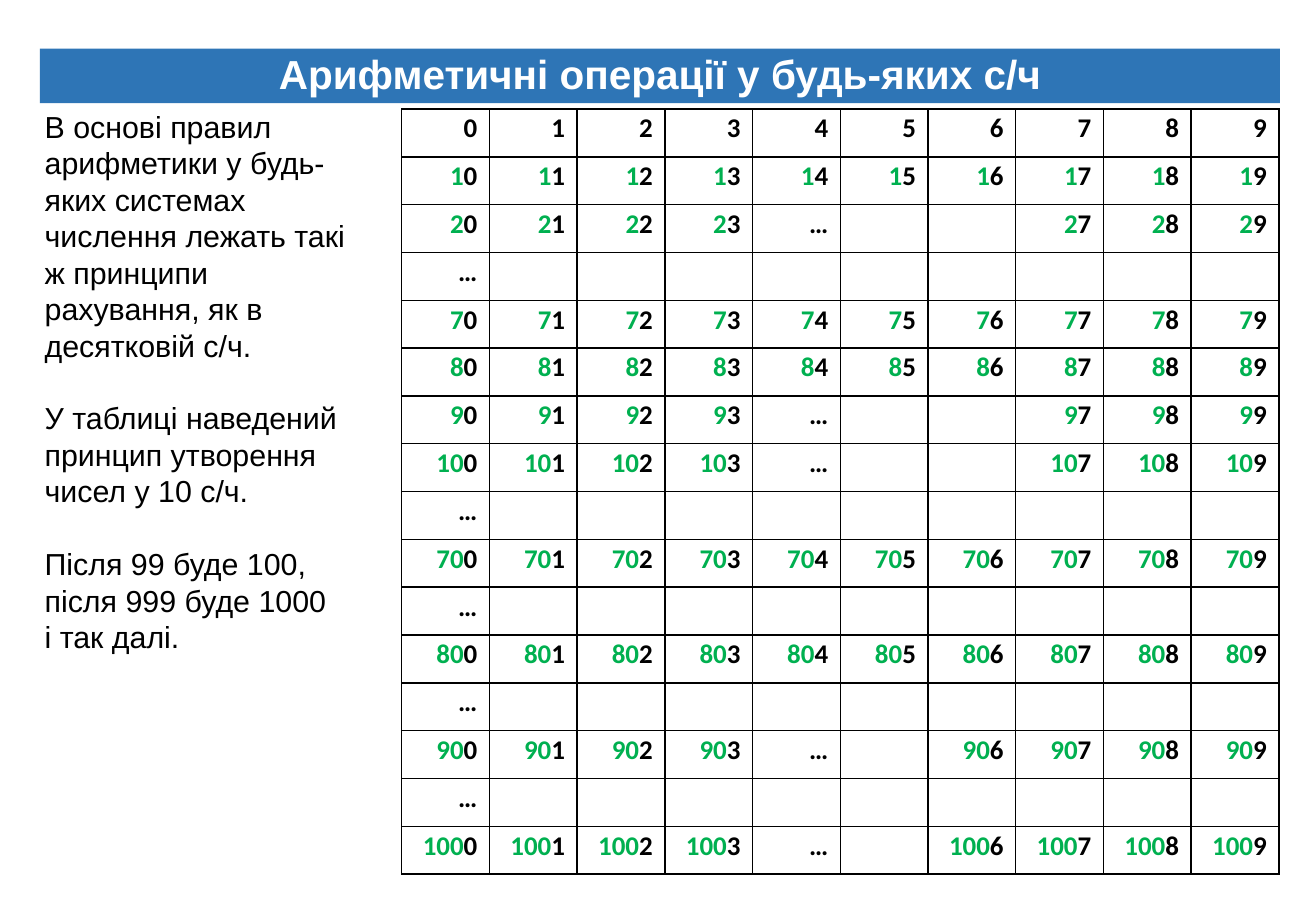
"""Builds the slide on how numbers are formed in the decimal system."""
import pptx
import pptx.dml.color
import pptx.enum.shapes
import pptx.enum.text
import pptx.util
import lxml.etree
from pptx.oxml.ns import qn

Pt = pptx.util.Pt
ALIGN = pptx.enum.text.PP_ALIGN
ANCHOR = pptx.enum.text.MSO_ANCHOR
COLORS = {"banner": "2E75B6", "white": "FFFFFF", "black": "000000", "prefix": "00B050"}


def style_run(run, font, size, color, bold=False):
    run.font.name = font
    run.font.size = Pt(size)
    run.font.bold = bold
    run.font.color.rgb = pptx.dml.color.RGBColor.from_string(COLORS[color])


def add_borders(cell):
    properties = cell._tc.get_or_add_tcPr()
    for position, side in enumerate(("a:lnL", "a:lnR", "a:lnT", "a:lnB")):
        line = lxml.etree.Element(qn(side), w=str(Pt(1)))
        fill = lxml.etree.SubElement(line, qn("a:solidFill"))
        lxml.etree.SubElement(fill, qn("a:srgbClr"), val=COLORS["black"])
        properties.insert(position, line)


presentation = pptx.Presentation()
presentation.slide_width = Pt(780)
presentation.slide_height = Pt(540)
slide = presentation.slides.add_slide(presentation.slide_layouts[6])

banner = slide.shapes.add_shape(
    pptx.enum.shapes.MSO_SHAPE.RECTANGLE, Pt(23.7), Pt(28.8), Pt(735), Pt(32.4))
banner.shadow.inherit = False
banner.fill.solid()
banner.fill.fore_color.rgb = pptx.dml.color.RGBColor.from_string(COLORS["banner"])
banner.line.fill.background()
heading = banner.text_frame
heading.margin_left = heading.margin_right = Pt(5.8)
heading.margin_top = heading.margin_bottom = Pt(2.9)
heading.vertical_anchor = ANCHOR.BOTTOM
heading.text = "Арифметичні операції у будь-яких с/ч"
heading.paragraphs[0].alignment = ALIGN.CENTER
heading.paragraphs[0].line_spacing = 0.9
style_run(heading.paragraphs[0].runs[0], "Arial", 24, "white", True)

explanation_lines = [
    ("В основі правил арифметики у будь-яких системах числення лежать такі ж "
     "принципи рахування, як в десятковій с/ч.", 0),
    ("У таблиці наведений принцип утворення чисел у 10 с/ч.", 21.6),
    ("Після 99 буде 100,", 21.6),
    ("після 999 буде 1000", 0),
    ("і так далі.", 0),
]
explanation = slide.shapes.add_textbox(Pt(19.4), Pt(60.5), Pt(208), Pt(356.4)).text_frame
explanation.word_wrap = True
explanation.text = "\n".join(text for text, gap in explanation_lines)
for paragraph, (text, gap) in zip(explanation.paragraphs, explanation_lines):
    paragraph.line_spacing = Pt(21.6)
    if gap:
        paragraph.space_before = Pt(gap)
    style_run(paragraph.runs[0], "Arial", 18, "black")

ELLIPSIS = "…"
full = range(10)
skip_to_6 = (0, 1, 2, 3, 6, 7, 8, 9)
skip_to_7 = (0, 1, 2, 3, 7, 8, 9)
number_rows = [
    ("", full), ("1", full), ("2", skip_to_7), (ELLIPSIS, ()),
    ("7", full), ("8", full), ("9", skip_to_7), ("10", skip_to_7), (ELLIPSIS, ()),
    ("70", full), (ELLIPSIS, ()), ("80", full), (ELLIPSIS, ()),
    ("90", skip_to_6), (ELLIPSIS, ()), ("100", skip_to_6),
]
numbers = slide.shapes.add_table(
    len(number_rows), 10, Pt(238.1), Pt(64.6), Pt(520), Pt(453.6)).table
numbers.first_row = numbers.horz_banding = False
for column in numbers.columns:
    column.width = Pt(52)
for row, (prefix, digits) in enumerate(number_rows):
    numbers.rows[row].height = Pt(28.35)
    first_gap = next((digit for digit in full if digit not in digits), None)
    for digit in full:
        cell = numbers.cell(row, digit)
        cell.fill.background()
        add_borders(cell)
        cell.vertical_anchor = ANCHOR.MIDDLE
        if digit in digits:
            parts = [(prefix, "prefix"), (str(digit), "black")]
        elif digit == first_gap:
            parts = [(ELLIPSIS, "black")]
        else:
            cell.margin_top = cell.margin_bottom = Pt(0)
            continue
        paragraph = cell.text_frame.paragraphs[0]
        paragraph.alignment = ALIGN.RIGHT
        paragraph.line_spacing = 0.5
        paragraph.space_after = Pt(0 if row == 3 else 6)
        for text, color in parts:
            if text:
                run = paragraph.add_run()
                run.text = text
                style_run(run, "Calibri", 16, color, True)

presentation.save("out.pptx")
